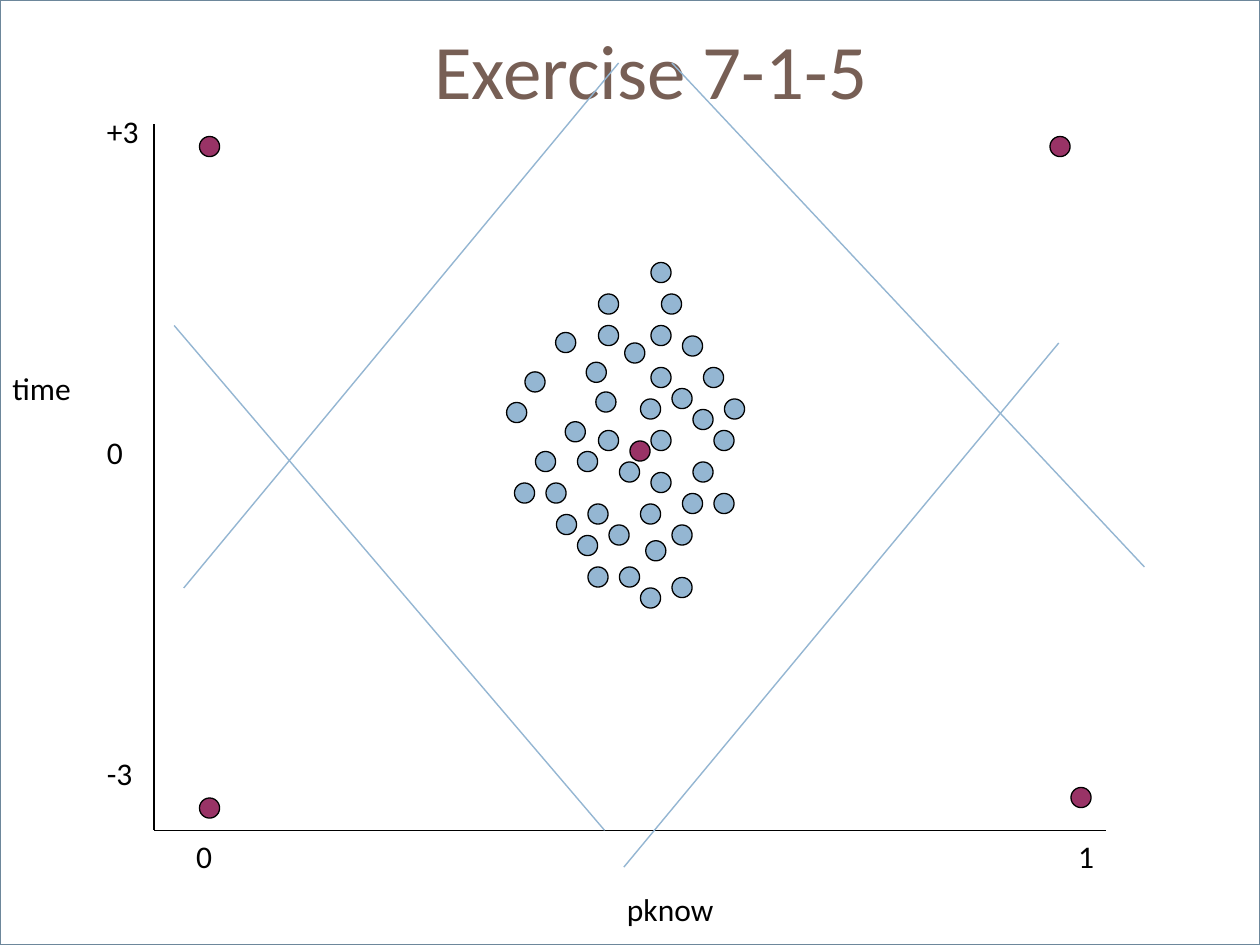
from lxml import etree
from pptx import Presentation
from pptx.dml.color import RGBColor
from pptx.enum import shapes, text
from pptx.oxml import ns
from pptx.util import Pt

WHITE = RGBColor(0xFF, 0xFF, 0xFF)
BLACK = RGBColor(0x00, 0x00, 0x00)
BROWN = RGBColor(0x77, 0x5F, 0x55)
BLUE = RGBColor(0x94, 0xB6, 0xD2)
PLUM = RGBColor(0x99, 0x33, 0x66)
FRAME = RGBColor(0x6D, 0x87, 0x9B)

FONT = "Calibri"
DOT_SIZE = 11.5
LABEL_HEIGHT = 29

# Dot positions from the top left of the cloud: row offset -> column offsets
CLOUD_ROWS = {
    0: [84], 18: [54, 90], 36: [54, 84], 40: [29.5], 42: [102], 46: [69],
    57: [47], 60: [84, 114], 62.5: [12], 72: [96], 74: [52.5],
    78: [78, 126], 80: [1.5], 84: [108], 91: [35], 96: [54, 84, 120],
    108: [18, 42], 114: [66, 108], 120: [84], 126: [6, 24],
    132: [102, 120], 138: [48, 78], 144: [30], 150: [60, 96], 156: [42],
    159: [81], 174: [48, 66], 180: [96], 186: [78],
}
# Positions from the top left of the plot
CENTROIDS = [(26, 7), (512, 7), (524, 379), (26, 385), (272, 181)]
BOUNDARIES = [
    (265.5, -35, 17, 265),
    (257.5, 403.5, 11.5, 115),
    (296, -35, 566, 253),
    (517, 125, 268.5, 424.5),
]


def add_shape(slide, kind, left, top, width, height, fill, line, weight):
    shape = slide.shapes.add_shape(kind, Pt(left), Pt(top), Pt(width), Pt(height))
    shape.shadow.inherit = False
    shape.fill.solid()
    shape.fill.fore_color.rgb = fill
    shape.line.color.rgb = line
    shape.line.width = Pt(weight)


def add_dot(slide, left, top, fill):
    add_shape(slide, shapes.MSO_SHAPE.OVAL, left, top, DOT_SIZE, DOT_SIZE,
              fill, BLACK, 0.75)


def add_line(slide, x1, y1, x2, y2, color, weight):
    line = slide.shapes.add_connector(
        shapes.MSO_CONNECTOR.STRAIGHT, Pt(x1), Pt(y1), Pt(x2), Pt(y2))
    line.line.color.rgb = color
    line.line.width = Pt(weight)
    etree.SubElement(line._element.spPr, ns.qn("a:effectLst"))


def add_text(slide, wording, left, top, width, height, size=18, color=BLACK,
             align=text.PP_ALIGN.LEFT, anchor=text.MSO_ANCHOR.TOP):
    box = slide.shapes.add_textbox(Pt(left), Pt(top), Pt(width), Pt(height))
    frame = box.text_frame
    frame.word_wrap = True
    frame.vertical_anchor = anchor
    frame.text = wording
    paragraph = frame.paragraphs[0]
    paragraph.alignment = align
    font = paragraph.runs[0].font
    font.name = FONT
    font.size = Pt(size)
    font.color.rgb = color


def add_title(slide, left, top, width, height):
    add_text(slide, "Exercise 7-1-5", left, top, width, height, 44, BROWN,
             text.PP_ALIGN.CENTER, text.MSO_ANCHOR.MIDDLE)


def add_axes(slide, left, top, width, height):
    bottom = top + height
    add_line(slide, left, top, left, bottom, BLACK, 0.75)
    add_line(slide, left, bottom, left + width, bottom, BLACK, 0.75)
    for index, label in enumerate(["+3", "0", "-3"]):
        add_text(slide, label, left - 34, top - 10.5 + 183.5 * index, 45, LABEL_HEIGHT)
    for index, label in enumerate(["0", "1"]):
        add_text(slide, label, left + 17 + 504 * index, bottom, 30, LABEL_HEIGHT)
    add_text(slide, "time", left - 88, top + 136.5, 60, LABEL_HEIGHT)
    add_text(slide, "pknow", left + 17, bottom + 30.5, 556, LABEL_HEIGHT,
             align=text.PP_ALIGN.CENTER)


def add_clusters(slide, left, top):
    """Place the cloud of points, the centroids and the boundaries between them."""
    for row, columns in CLOUD_ROWS.items():
        for column in columns:
            add_dot(slide, left + 200 + column, top + 79 + row, BLUE)
    for x, y in CENTROIDS:
        add_dot(slide, left + x, top + y, PLUM)
    for x1, y1, x2, y2 in BOUNDARIES:
        add_line(slide, left + x1, top + y1, left + x2, top + y2, BLUE, 0.79)


def main():
    presentation = Presentation()
    presentation.slide_width = Pt(720)
    presentation.slide_height = Pt(540)
    slide = presentation.slides.add_slide(presentation.slide_layouts[6])
    add_shape(slide, shapes.MSO_SHAPE.RECTANGLE, 0, 0, 720, 540, WHITE, FRAME, 1.5)
    add_title(slide, 51, 0, 642, 78)
    add_axes(slide, 88, 71, 544, 403.5)
    add_clusters(slide, 88, 71)
    presentation.save("out.pptx")


if __name__ == "__main__":
    main()
